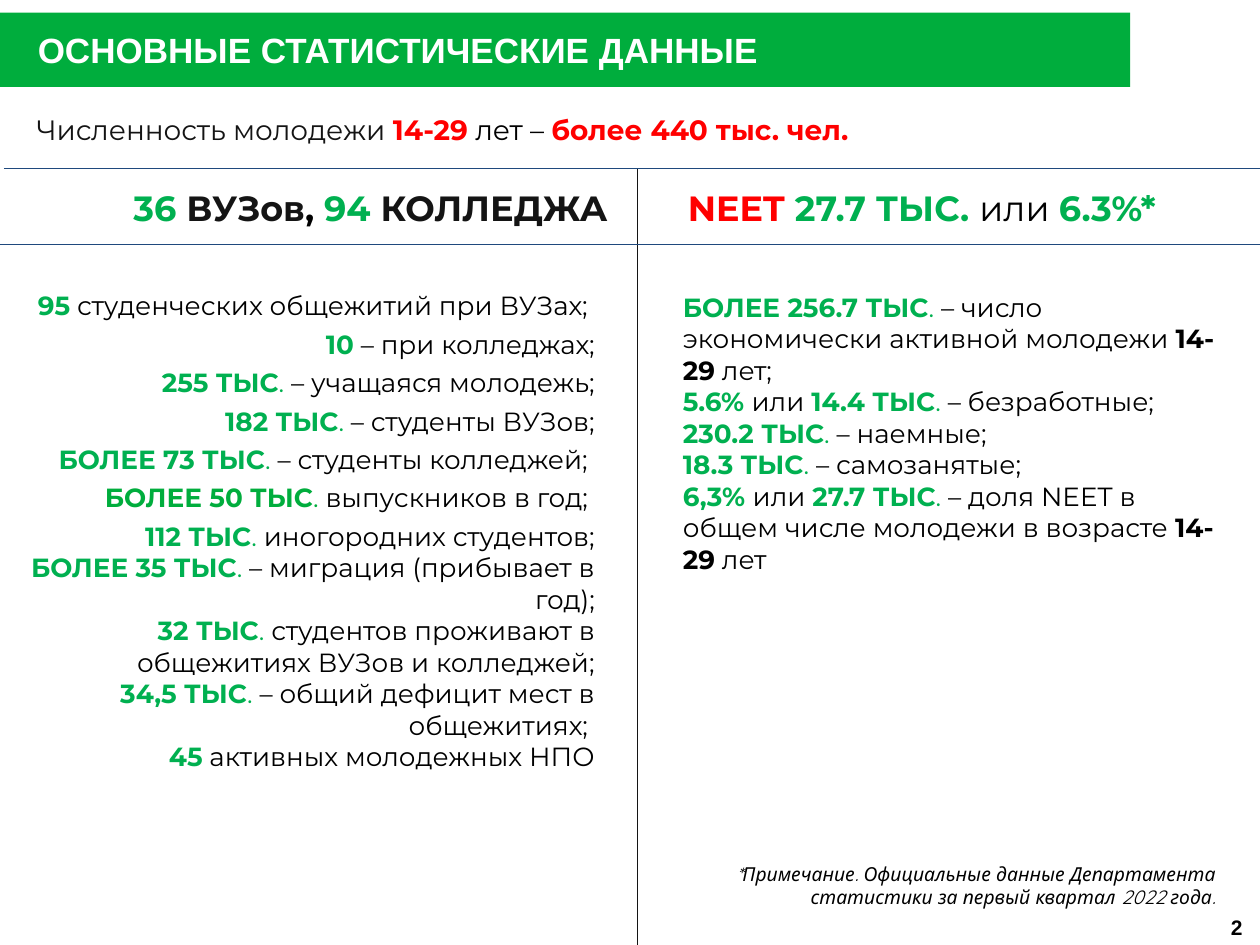
from pptx import Presentation, util as u
from pptx.dml.color import RGBColor
from pptx.enum import shapes, text
from pptx.oxml.ns import qn
from lxml import etree

COLORS = {
    "banner": "00AD3D", "green": "00B050", "red": "FF0000", "ink": "141414",
    "black": "000000", "white": "FFFFFF", "rule": "1F497D",
}
LEFT, RIGHT = text.PP_ALIGN.LEFT, text.PP_ALIGN.RIGHT

deck = Presentation()
deck.slide_width, deck.slide_height = u.Inches(10), u.Inches(7.5)
page = deck.slides.add_slide(deck.slide_layouts[6])


def add_text(place, paragraphs, size, font="Montserrat", align=LEFT,
             insets=(0, 0, 0, 0), italic=False, gaps=()):
    """Add a box; each paragraph is a list of (words, colour, bold) runs."""
    box = page.shapes.add_textbox(*[u.Inches(v) for v in place])
    frame = box.text_frame
    frame.word_wrap = True
    (frame.margin_left, frame.margin_top,
     frame.margin_right, frame.margin_bottom) = [u.Inches(v) for v in insets]
    for index, runs in enumerate(paragraphs):
        para = frame.paragraphs[0] if index == 0 else frame.add_paragraph()
        para.alignment = align
        if index in gaps:
            para.space_before = u.Pt(3.9)
        for words, color, bold in runs:
            span = para.add_run()
            span.text = words
            span.font.name, span.font.size = font, u.Pt(size)
            span.font.bold, span.font.italic = bold, italic
            span.font.color.rgb = RGBColor.from_string(COLORS[color])


def figure(amount, label, color="green", gap=" "):
    """Runs for a bold amount in thousands followed by its label."""
    return [(amount + " ТЫС", color, True), ("." + gap, color, False),
            (label, "black", False)]


# Title banner
banner = page.shapes.add_shape(
    shapes.MSO_SHAPE.RECTANGLE, u.Inches(0), u.Inches(0.1), u.Inches(8.97), u.Inches(0.59))
banner.shadow.inherit = False
banner.fill.solid()
banner.fill.fore_color.rgb = RGBColor.from_string(COLORS["banner"])
banner.line.fill.background()
add_text((0.3, 0.22, 6.74, 0.35), [[("ОСНОВНЫЕ СТАТИСТИЧЕСКИЕ ДАННЫЕ", "white", True)]],
         20, "Arial", insets=(0, 0.01, 0, 0))

# Youth population
add_text((0.19, 0.84, 9.18, 0.35), [[
    ("Численность молодежи ", "ink", False), ("14-29", "red", True),
    (" лет – ", "black", False), ("более 440 тыс. чел.", "red", True),
]], 16, insets=(0.1, 0.05, 0.1, 0.05))

# Dividing lines
for x1, y1, x2, y2, color in [
    (5.06, 1.34, 5.06, 7.5, "ink"),
    (0, 1.94, 10, 1.94, "rule"),
    (0.03, 1.34, 10, 1.34, "rule"),
]:
    divider = page.shapes.add_connector(
        shapes.MSO_CONNECTOR.STRAIGHT, *[u.Inches(v) for v in (x1, y1, x2, y2)])
    divider.line.color.rgb = RGBColor.from_string(COLORS[color])
    divider.line.width = u.Pt(0.75)
    etree.SubElement(divider._element.spPr, qn("a:effectLst"))

# Column headings
add_text((0.19, 1.48, 4.73, 0.4), [[
    ("36 ", "green", True), ("ВУЗов", "ink", True), (", ", "black", True),
    ("94 ", "green", True), ("КОЛЛЕДЖА", "ink", True),
]], 20, align=RIGHT, insets=(0.1, 0, 0.1, 0))
add_text((5.46, 1.48, 4.29, 0.37), [[
    ("NEET ", "red", True), ("27.7 ТЫС. ", "green", True),
    ("или ", "black", False), ("6.3%*", "green", True),
]], 20)

# Education figures; the opening lines are spaced apart
add_text((0.09, 2.2, 4.73, 4.13), [
    [("95", "green", True), (" студенческих общежитий при ВУЗах; ", "black", False)],
    [("10", "green", True), (" – при колледжах;", "black", False)],
    figure("255", "– учащаяся молодежь;"),
    figure("182", "– студенты ВУЗов;"),
    figure("БОЛЕЕ 73", "– студенты колледжей; "),
    figure("БОЛЕЕ 50", "выпускников в год; ", "banner"),
    figure("112", "иногородних студентов;"),
    figure("БОЛЕЕ 35", "– миграция (прибывает в год);"),
    figure("32", " студентов проживают в общежитиях ВУЗов и колледжей;", gap=""),
    figure("34,5", "– общий дефицит мест в общежитиях; "),
    [("45", "green", True), (" активных молодежных НПО", "black", False)],
], 15, align=RIGHT, insets=(0.1, 0.1, 0.1, 0.1), gaps=range(1, 7))

# Employment figures
age_group = ("14-29", "black", True)
either = ("или ", "black", False)
add_text((5.42, 2.25, 4.23, 2.4), [
    figure("БОЛЕЕ 256.7", "– число экономически активной молодежи ")
    + [age_group, (" лет;", "black", False)],
    [("5.6% ", "green", True), either] + figure("14.4", "– безработные;"),
    figure("230.2", "– наемные;"),
    figure("18.3", "– самозанятые;"),
    [("6,3% ", "green", True), either]
    + figure("27.7", "– доля NEET в общем числе молодежи в возрасте ")
    + [age_group, (" лет", "black", False)],
], 15, insets=(0, 0.06, 0, 0))

# Footnote and page number
add_text((5.42, 6.84, 4.23, 0.4), [[
    ("*Примечание. Официальные данные Департамента статистики за первый квартал 2022 года.",
     "black", False)]], 11, "Quicksand", RIGHT, italic=True)
add_text((9.77, 7.26, 0.23, 0.2), [[("2", "black", True)]], 12, "Arial")

deck.save("out.pptx")
